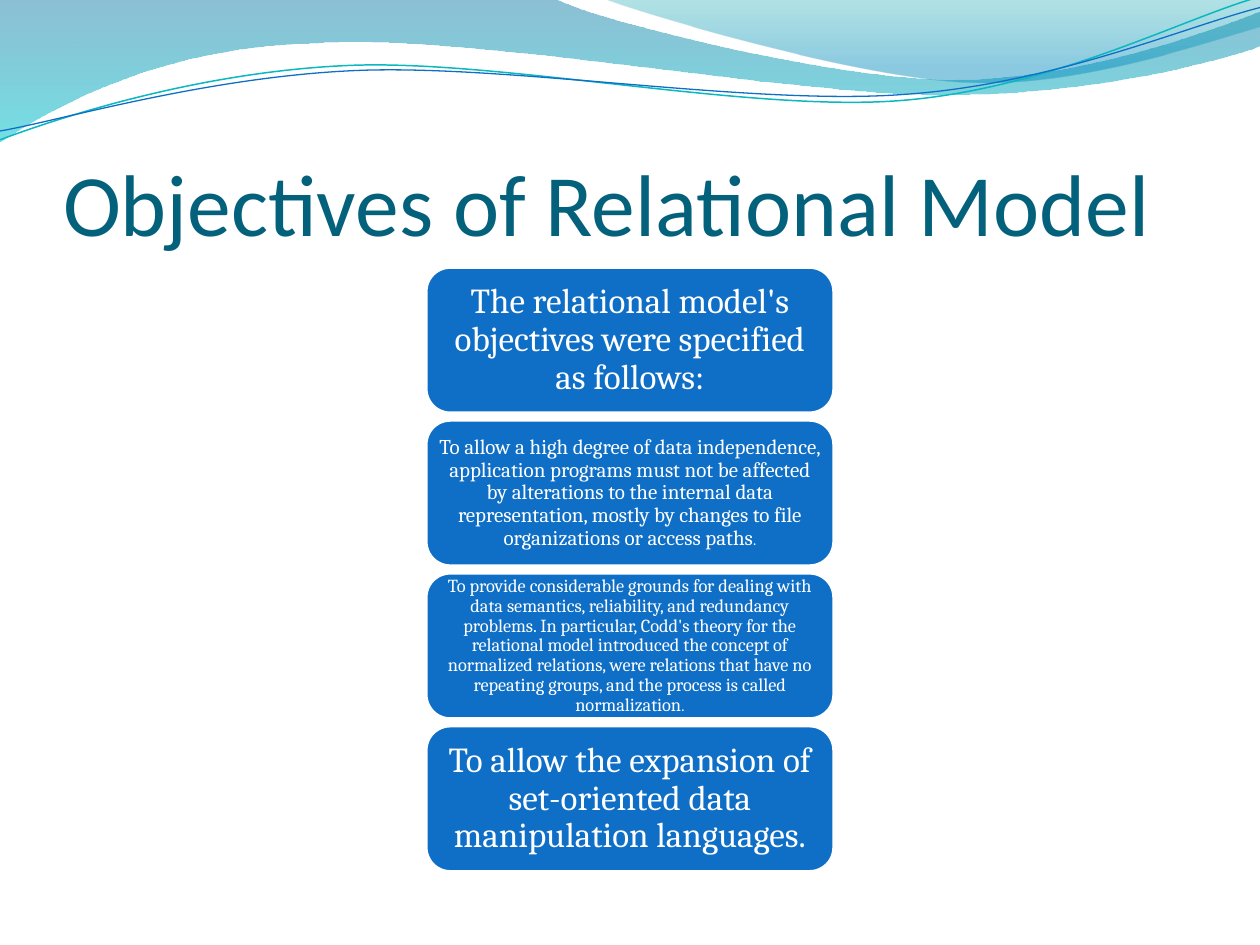
from lxml.etree import SubElement
from pptx import Presentation
from pptx.dml.color import RGBColor
from pptx.enum.shapes import MSO_SHAPE
from pptx.enum.text import MSO_ANCHOR, MSO_AUTO_SIZE, PP_ALIGN
from pptx.oxml.ns import qn
from pptx.util import Inches, Pt

COLORS = {
    "title": "04617B", "card": "0F6FC6", "white": "FFFFFF",
    "teal_line": "0AB8BF", "blue_line": "0F6FC6",
    "deep_blue": "0074A1", "cyan": "00C6CF",
    "teal": "00A1A9", "sky": "008BBF",
}
TITLE_FONT, BODY_FONT = "Calibri", "Cambria"

# Each outline is a start point and segments: 1 point = line, 3 points = Bezier curve
WIDE_WAVE = [(0, 0), [(4.4, -0.01)],
             [(4.76, 0.17), (6.64, 0.63), (7.58, 0.63)],
             [(8.53, 0.63), (9.58, 0.26), (10, 0.09)],
             [(10.01, 0.36)],
             [(9.83, 0.44), (8.7, 0.76), (7.46, 0.75)],
             [(6.22, 0.75), (3.82, 0.28), (2.57, 0.34)],
             [(1.29, 0.36), (0.46, 0.83), (-0.01, 1.13)]]
RIGHT_WAVE = [(4.79, -0.01),
              [(5.09, 0.11), (6.82, 0.62), (7.69, 0.65)],
              [(8.56, 0.69), (9.61, 0.32), (10, 0.21)],
              [(10, 0)]]
TEAL_CURVE = [(0, 1.11),
              [(0.48, 0.93), (1.58, 0.57), (2.77, 0.52)],
              [(3.95, 0.47), (5.93, 0.89), (7.13, 0.8)],
              [(8.33, 0.71), (9.38, 0.15), (9.98, -0.02)]]
BLUE_CURVE = [(0, 1.04),
              [(0.47, 0.96), (1.64, 0.61), (2.83, 0.56)],
              [(4.03, 0.51), (5.97, 0.84), (7.17, 0.75)],
              [(8.36, 0.67), (9.41, 0.21), (10, 0.06)]]

# Runs of (text, size), then side and top insets
OBJECTIVES = [
    ([("The relational model's objectives were specified as follows:", 20)], 0.08, 0.04),
    ([("To allow a high degree of data independence, application programs must not be "
       "affected by alterations to the internal data representation, mostly by changes "
       "to file organizations or access paths", 12), (".", 9)], 0.05, 0.03),
    ([("To provide considerable grounds for dealing with data semantics, reliability, "
       "and redundancy problems. In particular, Codd's theory for the relational model "
       "introduced the concept of normalized relations, were relations that have no "
       "repeating groups, and the process is called normalization", 10.5), (".", 9)],
     0.05, 0.02),
    ([("To allow the expansion of set-oriented data manipulation languages.", 20)],
     0.08, 0.04),
]
CARD_LEFT, CARD_WIDTH, CARD_HEIGHT = 3.38, 3.24, 1.16
FIRST_TOP, LAST_TOP = 2.12, 5.76
CARD_PITCH = (LAST_TOP - FIRST_TOP) / (len(OBJECTIVES) - 1)


def rgb(name):
    return RGBColor.from_string(COLORS[name])


class SlideBuilder:
    def __init__(self, slide):
        self.slide = slide

    def outline(self, start, segments, closed):
        builder = self.slide.shapes.build_freeform(*map(Inches, start))
        builder.add_line_segments(
            [tuple(map(Inches, segment[-1])) for segment in segments], close=closed)
        shape = builder.convert_to_shape()
        shape.shadow.inherit = False
        # Turn the three-point segments into Bezier curves
        lines = list(shape.element.spPr.iter(qn("a:lnTo")))
        for line, segment in zip(lines, segments):
            if len(segment) == 3:
                line.tag = qn("a:cubicBezTo")
                line.clear()
                for x, y in segment:
                    SubElement(line, qn("a:pt"), x=str(Inches(x) - shape.left),
                               y=str(Inches(y) - shape.top))
        return shape

    def wave(self, outline, stops):
        wave = self.outline(outline[0], outline[1:], closed=True)
        wave.line.fill.background()
        wave.fill.gradient()
        wave.fill.gradient_angle = 270
        for stop, (position, color, _) in zip(wave.fill.gradient_stops, stops):
            stop.position = position
            stop.color.rgb = rgb(color)
        colors = list(wave.element.spPr.iter(qn("a:srgbClr")))
        for color_element, (_, _, opacity) in zip(colors, stops):
            SubElement(color_element, qn("a:alpha"), val=str(opacity * 1000))

    def curve(self, outline, color, width):
        curve = self.outline(outline[0], outline[1:], closed=False)
        curve.fill.background()
        curve.line.color.rgb = rgb(color)
        curve.line.width = Pt(width)

    def add_run(self, paragraph, text, size, font, color):
        run = paragraph.add_run()
        run.text = text
        run.font.size, run.font.name = Pt(size), font
        run.font.color.rgb = rgb(color)

    def set_frame(self, frame, anchor, left, top, right, bottom):
        frame.word_wrap = True
        frame.auto_size = MSO_AUTO_SIZE.NONE
        frame.vertical_anchor = anchor
        frame.margin_left, frame.margin_top = Inches(left), Inches(top)
        frame.margin_right, frame.margin_bottom = Inches(right), Inches(bottom)

    def title(self, text):
        title = self.slide.shapes.title
        title.left, title.top = Inches(0.5), Inches(0.77)
        title.width, title.height = Inches(9), Inches(1.25)
        self.set_frame(title.text_frame, MSO_ANCHOR.BOTTOM, 0, 0.05, 0, 0)
        paragraph = title.text_frame.paragraphs[0]
        paragraph.alignment = PP_ALIGN.LEFT
        self.add_run(paragraph, text, 50, TITLE_FONT, "title")
        title.element.getparent().append(title.element)  # in front of the waves

    def card(self, top, runs, side, edge):
        card = self.slide.shapes.add_shape(
            MSO_SHAPE.ROUNDED_RECTANGLE, Inches(CARD_LEFT), Inches(top),
            Inches(CARD_WIDTH), Inches(CARD_HEIGHT))
        card.shadow.inherit = False
        card.fill.solid()
        card.fill.fore_color.rgb = rgb("card")
        card.line.color.rgb = rgb("white")
        card.line.width = Pt(2)
        self.set_frame(card.text_frame, MSO_ANCHOR.MIDDLE, side, edge, side, edge)
        paragraph = card.text_frame.paragraphs[0]
        paragraph.alignment = PP_ALIGN.CENTER
        paragraph.line_spacing = 0.9
        for text, size in runs:
            self.add_run(paragraph, text, size, BODY_FONT, "white")


def main():
    deck = Presentation()
    deck.slide_width, deck.slide_height = Inches(10), Inches(7.5)
    builder = SlideBuilder(deck.slides.add_slide(deck.slide_layouts[5]))

    # Waves along the top
    builder.wave(WIDE_WAVE, [(0, "deep_blue", 45), (1, "cyan", 55)])
    builder.wave(RIGHT_WAVE, [(0, "teal", 30), (0.8, "sky", 45)])
    builder.curve(TEAL_CURVE, "teal_line", 0.85)
    builder.curve(BLUE_CURVE, "blue_line", 0.75)

    # Title and column of objectives
    builder.title("Objectives of Relational Model")
    for row, (runs, side, edge) in enumerate(OBJECTIVES):
        builder.card(FIRST_TOP + row * CARD_PITCH, runs, side, edge)

    deck.save("out.pptx")


if __name__ == "__main__":
    main()
